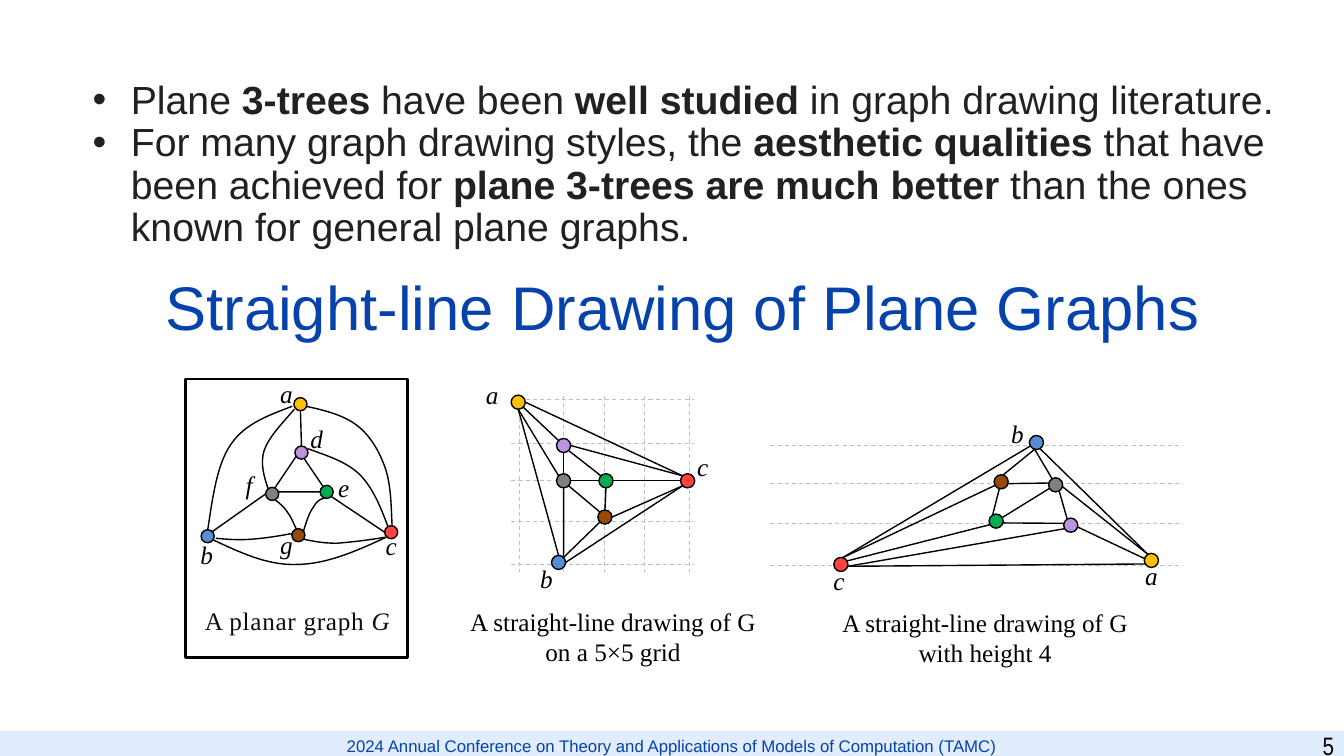
import math

from lxml import etree
from pptx import Presentation
from pptx import util as u
from pptx.dml.color import RGBColor
from pptx.enum import dml, shapes, text
from pptx.oxml import ns

COLORS = {
    "white": "FFFFFF", "black": "000000", "body": "202122", "caption": "0D0D0D",
    "blue": "0642AC", "footer": "E1ECFE", "grid": "BFBFBF",
}
NODE_COLORS = {
    "a": "FFC000", "b": "558ED5", "c": "FF4343", "d": "BD92DE",
    "e": "00B050", "f": "808080", "g": "984807",
}
SERIF = "Times New Roman"
COMPASS = ["E", "SE", "S", "SW", "W", "NW", "N", "NE"]  # clockwise, 45 degrees apart

# Each graph: node centres, label corners, edges as "node side node side"
PLANAR = {
    "radius": 0.065, "turn": 0,
    "nodes": {"a": (2.98, 4.01), "b": (2.06, 5.32), "c": (3.88, 5.28), "d": (2.99, 4.49),
              "e": (3.24, 4.88), "f": (2.7, 4.9), "g": (2.96, 5.31)},
    "labels": {"a": (2.65, 3.78), "b": (1.86, 5.38), "c": (3.69, 5.29), "d": (2.95, 4.22),
               "e": (3.22, 4.71), "f": (2.28, 4.68), "g": (2.65, 5.28)},
    "edges": ["a S d N", "f W b NE", "c W e SE"],
}
GRID_DRAWING = {
    "radius": 0.07, "turn": 0,
    "nodes": {"a": (5.14, 3.99), "b": (5.54, 5.58), "c": (6.82, 4.77), "d": (5.59, 4.42),
              "e": (6.01, 4.77), "f": (5.59, 4.77), "g": (6, 5.13)},
    "labels": {"a": (4.69, 3.79), "b": (5.23, 5.61), "c": (6.78, 4.5)},
    "edges": ["a SE d NW", "f S b NE", "g SW b NE", "g NW f SE", "g N e S",
              "c SW g E", "f NW a S", "c NW d E", "e E c W", "d SE e NW",
              "a S b N", "d S f N", "f E e W", "b E c SW", "a E c NW"],
}
HEIGHT_DRAWING = {
    "radius": 0.07, "turn": 15,
    "nodes": {"a": (11.42, 5.56), "b": (10.28, 4.39), "c": (8.34, 5.6), "d": (10.62, 5.21),
              "e": (9.88, 5.17), "f": (10.47, 4.81), "g": (9.93, 4.78)},
    "labels": {"a": (11.23, 5.58), "b": (9.9, 4.17), "c": (8.13, 5.63)},
    "edges": ["a W d E", "f NW b S", "g N b S", "g E f W", "g S e NW",
              "c N g SW", "f E a NW", "c E d SW", "e SW c NE", "d W e E",
              "a NW b SE", "d NW f SE", "f SW e NE", "b SW c N", "a SW c E"],
}
# Curved edges: a start point, then three points for each Bezier piece
CURVES = [
    [(2.06, 5.26), (2.11, 4.94), (2.15, 4.61), (2.29, 4.41),
     (2.43, 4.2), (2.67, 4.12), (2.9, 4.03)],
    [(3.03, 4.03), (3.22, 4.07), (3.41, 4.12), (3.54, 4.22), (3.67, 4.32),
     (3.76, 4.47), (3.82, 4.64), (3.88, 4.81), (3.88, 5.02), (3.89, 5.23)],
    [(2.1, 5.35), (2.38, 5.48), (2.65, 5.61), (2.94, 5.6),
     (3.23, 5.6), (3.53, 5.47), (3.83, 5.33)],
    [(2.14, 5.34), (2.25, 5.35), (2.36, 5.36), (2.49, 5.35),
     (2.62, 5.34), (2.76, 5.32), (2.91, 5.29)],
    [(2.73, 4.96), (2.77, 4.99), (2.82, 5.03), (2.85, 5.08),
     (2.89, 5.13), (2.91, 5.19), (2.94, 5.25)],
    [(3.01, 5.27), (3.04, 5.17), (3.07, 5.08), (3.11, 5.03),
     (3.14, 4.97), (3.18, 4.95), (3.22, 4.94)],
    [(3.01, 5.35), (3.11, 5.37), (3.2, 5.39), (3.34, 5.39),
     (3.47, 5.38), (3.65, 5.36), (3.82, 5.33)],
    [(2.66, 4.85), (2.62, 4.73), (2.58, 4.6), (2.62, 4.47),
     (2.67, 4.33), (2.8, 4.2), (2.92, 4.06)],
    [(3.05, 4.45), (3.24, 4.52), (3.44, 4.58), (3.57, 4.71),
     (3.7, 4.84), (3.78, 5.04), (3.85, 5.23)],
]
BULLETS = [
    [("Plane ", False), ("3-trees", True), (" have been ", False),
     ("well studied ", True), ("in graph drawing literature.", False)],
    [("For many graph drawing styles, the ", False), ("aesthetic qualities ", True),
     ("that have been achieved for ", False), ("plane 3-trees are much better ", True),
     ("than the ones known for general plane graphs.", False)],
]


def paint(shape, fill=None, line=None, width=1):
    shape.shadow.inherit = False
    if fill:
        shape.fill.solid()
        shape.fill.fore_color.rgb = RGBColor.from_string(fill)
    else:
        shape.fill.background()
    if line:
        shape.line.color.rgb = RGBColor.from_string(line)
        shape.line.width = u.Pt(width)
    else:
        shape.line.fill.background()


def add_figure(page, kind, place, **look):
    shape = page.shapes.add_shape(kind, *map(u.Inches, place))
    paint(shape, **look)
    return shape


def style(span, size, font, color, bold=False, italic=False):
    span.font.size, span.font.name = u.Pt(size), font
    span.font.bold, span.font.italic = bold, italic
    span.font.color.rgb = RGBColor.from_string(color)


def add_text(page, place, spans, size, font, color, align="CENTER", anchor="TOP",
             wrap=True, spacing=None, letter_spacing=None, look=None):
    """Place one paragraph of (wording, italic) spans; a look puts it in a rectangle."""
    if look:
        box = add_figure(page, shapes.MSO_SHAPE.RECTANGLE, place, **look)
    else:
        box = page.shapes.add_textbox(*map(u.Inches, place))
    frame = box.text_frame
    frame.word_wrap = wrap
    frame.vertical_anchor = text.MSO_ANCHOR[anchor]
    para = frame.paragraphs[0]
    para.alignment = text.PP_ALIGN[align]
    para.line_spacing = spacing
    for wording, italic in spans:
        span = para.add_run()
        span.text = wording
        style(span, size, font, color, italic=italic)
        if letter_spacing:
            span.font._element.set("spc", str(letter_spacing))


def add_bullets(page, place, items):
    box = add_figure(page, shapes.MSO_SHAPE.RECTANGLE, place, line=COLORS["white"])
    frame = box.text_frame
    frame.word_wrap = True
    frame.vertical_anchor = text.MSO_ANCHOR.TOP
    for index, item in enumerate(items):
        para = frame.add_paragraph() if index else frame.paragraphs[0]
        para.alignment = text.PP_ALIGN.LEFT
        para.line_spacing = 0.9
        props = para._p.get_or_add_pPr()
        props.set("marL", str(u.Inches(0.38)))
        props.set("indent", str(u.Inches(-0.38)))
        etree.SubElement(props, ns.qn("a:buFont")).set("typeface", "Arial")
        etree.SubElement(props, ns.qn("a:buChar")).set("char", "•")
        for wording, bold in item:
            span = para.add_run()
            span.text = wording
            style(span, 28, "Arial", COLORS["body"], bold=bold)


def add_line(page, start, end, color=COLORS["black"], width=1, dashed=False):
    line = page.shapes.add_connector(
        shapes.MSO_CONNECTOR.STRAIGHT, *map(u.Inches, (*start, *end)))
    line.line.color.rgb = RGBColor.from_string(color)
    line.line.width = u.Pt(width)
    if dashed:
        line.line.dash_style = dml.MSO_LINE.DASH
    etree.SubElement(line._element.spPr, ns.qn("a:effectLst"))


def add_grid(page, columns, rows, across, down=(0, 0)):
    lines = [((x, down[0]), (x, down[1])) for x in columns]
    lines += [((across[0], y), (across[1], y)) for y in rows]
    for start, end in lines:
        add_line(page, start, end, COLORS["grid"], 0.75, dashed=True)


def add_curve(page, points):
    track = [(u.Inches(x), u.Inches(y)) for x, y in points]
    builder = page.shapes.build_freeform(*track[0])
    builder.add_line_segments(track[1:], close=False)
    curve = builder.convert_to_shape()
    paint(curve, line=COLORS["black"])
    # Every three straight segments become one Bezier piece
    segments = list(curve._element.iter(ns.qn("a:lnTo")))
    for first in range(0, len(segments), 3):
        piece = segments[first]
        for follower in segments[first + 1:first + 3]:
            piece.append(follower[0])
            follower.getparent().remove(follower)
        piece.tag = ns.qn("a:cubicBezTo")


def add_graph(page, graph):
    radius, nodes = graph["radius"], graph["nodes"]

    def rim(name, side):
        angle = math.radians(45 * COMPASS.index(side) + graph["turn"])
        x, y = nodes[name]
        return x + radius * math.cos(angle), y + radius * math.sin(angle)

    for edge in graph["edges"]:
        tail, tail_side, head, head_side = edge.split()
        add_line(page, rim(tail, tail_side), rim(head, head_side))
    for name, (x, y) in nodes.items():
        add_figure(page, shapes.MSO_SHAPE.OVAL,
                   (x - radius, y - radius, 2 * radius, 2 * radius),
                   fill=NODE_COLORS[name], line=COLORS["black"])
    for name, corner in graph["labels"].items():
        add_text(page, (*corner, 0.38, 0.25), [(name, True)], 18, SERIF,
                 COLORS["black"], anchor="MIDDLE")


def main():
    deck = Presentation()
    deck.slide_width, deck.slide_height = u.Inches(13.33), u.Inches(7.5)
    page = deck.slides.add_slide(deck.slide_layouts[6])
    # Title, footer and page number
    add_text(page, (0.11, 2.7, 13.33, 0.84), [("Straight-line Drawing of Plane Graphs", False)],
             44, "Arial", COLORS["blue"], spacing=0.9, look={"line": COLORS["white"]})
    conference = "2024 Annual Conference on Theory and Applications of Models of Computation (TAMC)"
    add_text(page, (0, 7.25, 13.33, 0.25), [(conference, False)], 12, "Arial",
             COLORS["blue"], look={"fill": COLORS["footer"]})
    add_text(page, (10.83, 7.2, 2.5, 0.72), [("5", False)], 18, "Arial Narrow",
             COLORS["black"], align="RIGHT")
    # Planar graph in its frame
    add_figure(page, shapes.MSO_SHAPE.RECTANGLE, (1.84, 3.76, 2.2, 2.76),
               fill=COLORS["white"], line=COLORS["black"], width=2)
    add_figure(page, shapes.MSO_SHAPE.ISOSCELES_TRIANGLE, (2.7, 4.48, 0.54, 0.4),
               line=COLORS["black"])
    for points in CURVES:
        add_curve(page, points)
    add_graph(page, PLANAR)
    add_text(page, (1.92, 5.96, 2.06, 0.4), [("A planar graph ", False), ("G", True)],
             18, SERIF, COLORS["caption"], wrap=False, letter_spacing=50)
    # Straight-line drawings on their grids
    add_grid(page, (5.15, 5.59, 6, 6.39, 6.84), (3.96, 4.4, 4.77, 5.17, 5.6),
             (5.07, 6.88), (3.93, 5.67))
    add_graph(page, GRID_DRAWING)
    add_grid(page, (), (4.42, 4.8, 5.19, 5.61), (7.64, 11.73))
    add_graph(page, HEIGHT_DRAWING)
    for left, top, ending in ((4.53, 5.95, "on a 5×5 grid"), (8.22, 5.96, "with height 4")):
        add_text(page, (left, top, 3.1, 0.73),
                 [(f"A straight-line drawing of G {ending}", False)], 18, SERIF,
                 COLORS["black"], anchor="MIDDLE", look={"fill": COLORS["white"]})
    # Body
    add_bullets(page, (0.82, 0.75, 12.51, 1.84), BULLETS)
    deck.save("out.pptx")


if __name__ == "__main__":
    main()
